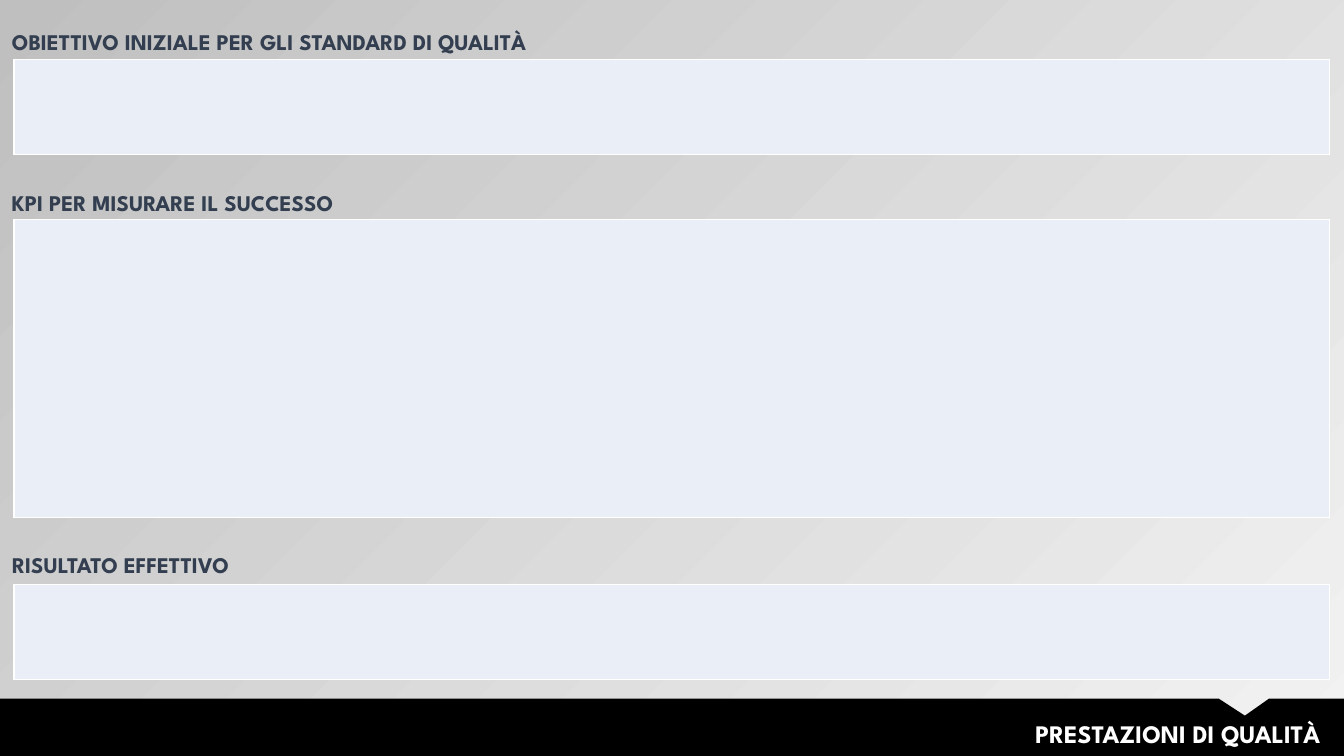
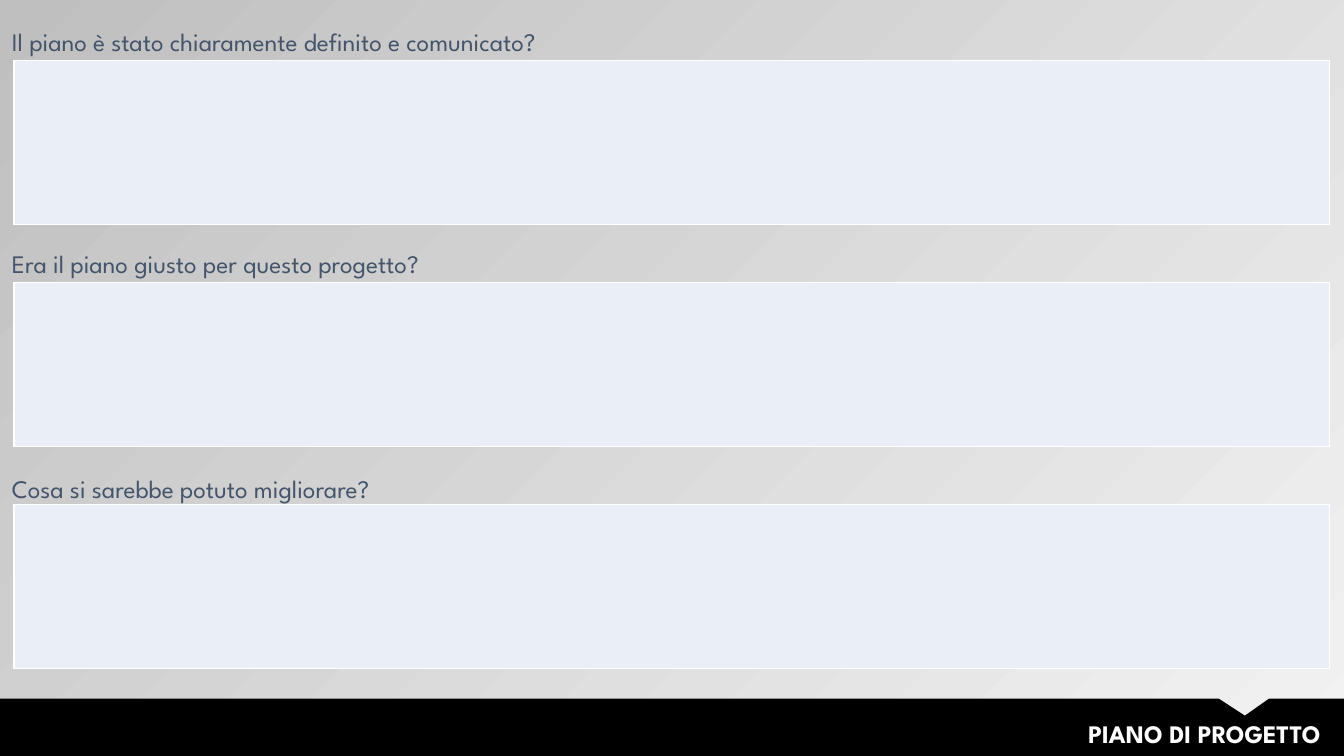
from lxml import etree
from pptx import Presentation
from pptx.dml.color import RGBColor
from pptx.enum import text
from pptx.oxml import ns
from pptx.util import Pt

SLIDE_W, SLIDE_H = 960, 540
FONT = "League Spartan"
BLACK, WHITE = "000000", "FFFFFF"
NAVY, SLATE, PANEL = "333F50", "44546A", "EAEFF7"
BACK_LIGHT, BACK_DARK = "F2F2F2", "BFBFBF"
BAND_TOP = 499
PANEL_LEFT, PANEL_W = 10, 939.6
LABEL_H = 28.8

HEADING = dict(size=16, color=NAVY, bold=True)
QUESTION = dict(size=18, color=SLATE)

# Each field: label, label width, label rise above the panel, panel top,
# panel height, label line spacing.
QUALITY_FIELDS = [
    ("OBIETTIVO INIZIALE PER GLI STANDARD DI QUALITÀ", 402, 28.8, 42.5, 67.7, Pt(21.5)),
    ("KPI PER MISURARE IL SUCCESSO", 382, 28.8, 157, 212.4, Pt(21.5)),
    ("RISULTATO EFFETTIVO", 243, 30.2, 417.6, 67.7, Pt(21.5)),
]
PLAN_QUESTIONS = [
    ("Il piano è stato chiaramente definito e comunicato?", 28.8, Pt(21.5)),
    ("Era il piano giusto per questo progetto?", 28.8, Pt(21.5)),
    ("Cosa si sarebbe potuto migliorare?", 31, 1.2),
]
PLAN_TOP, PLAN_STEP, PLAN_H = 43.2, 158.6, 117.4
PLAN_FIELDS = [
    (question, 549.4, rise, PLAN_TOP + i * PLAN_STEP, PLAN_H, spacing)
    for i, (question, rise, spacing) in enumerate(PLAN_QUESTIONS)
]


def rgb(value):
    return RGBColor.from_string(value)


def add_text(slide, words, box, *, size, color, bold=False, align=None,
             margins=(7.2, 3.6), line_spacing=None, space_before=None):
    frame = slide.shapes.add_textbox(*map(Pt, box)).text_frame
    frame.word_wrap = True
    frame.auto_size = text.MSO_AUTO_SIZE.SHAPE_TO_FIT_TEXT
    frame.margin_left = frame.margin_right = Pt(margins[0])
    frame.margin_top = frame.margin_bottom = Pt(margins[1])
    paragraph = frame.paragraphs[0]
    paragraph.alignment = align
    paragraph.line_spacing = line_spacing
    paragraph.space_before = space_before
    run = paragraph.add_run()
    run.text = words
    run.font.name, run.font.size, run.font.bold = FONT, Pt(size), bold
    run.font.color.rgb = rgb(color)


def set_background(master):
    fill = master.background.fill
    fill.gradient()
    fill.gradient_angle = 135
    for stop, color in zip(fill.gradient_stops, (BACK_LIGHT, BACK_DARK)):
        stop.color.rgb = rgb(color)
    light = master.element.xpath("./p:cSld/p:bg//a:srgbClr")[0]
    etree.SubElement(light, ns.qn("a:alpha"), val="40000")


def add_borders(cell, color, width):
    properties = cell._tc.get_or_add_tcPr()
    for position, side in enumerate(("lnL", "lnR", "lnT", "lnB")):
        line = etree.Element(ns.qn(f"a:{side}"), w=str(Pt(width)))
        solid = etree.SubElement(line, ns.qn("a:solidFill"))
        etree.SubElement(solid, ns.qn("a:srgbClr"), val=color)
        properties.insert(position, line)


def add_panel(slide, box):
    """Draw an empty one-cell table to be filled in."""
    table = slide.shapes.add_table(1, 1, *map(Pt, box)).table
    table.first_row = table.horz_banding = False
    cell = table.cell(0, 0)
    cell.fill.solid()
    cell.fill.fore_color.rgb = rgb(PANEL)
    add_borders(cell, WHITE, 1)


def add_field(slide, field, style):
    label, width, rise, top, height, spacing = field
    add_panel(slide, (PANEL_LEFT, top, PANEL_W, height))
    add_text(slide, label, (0, top - rise, width, LABEL_H),
             margins=(8.6, 4.3), line_spacing=spacing,
             space_before=Pt(0.2 * style["size"]), **style)


def add_footer(slide, title, top):
    """Draw the notched band and the slide title in it."""
    outline = slide.shapes.build_freeform(Pt(0), Pt(top))
    outline.add_line_segments([
        (Pt(x), Pt(y)) for x, y in (
            (870.5, top), (889.2, top + 12.2), (906.5, top),
            (SLIDE_W, top), (SLIDE_W, SLIDE_H), (0, SLIDE_H))
    ], close=True)
    band = outline.convert_to_shape()
    band.shadow.inherit = False
    band.fill.solid()
    band.fill.fore_color.rgb = rgb(BLACK)
    band.line.fill.background()
    add_text(slide, title, (298, top + 10.8, 652.4, 28.8), size=18,
             color=WHITE, bold=True, align=text.PP_ALIGN.RIGHT)


def add_form_slide(prs, title, fields, style):
    slide = prs.slides.add_slide(prs.slide_layouts[6])
    add_footer(slide, title, BAND_TOP)
    for field in fields:
        add_field(slide, field, style)


def main():
    prs = Presentation()
    prs.slide_width, prs.slide_height = Pt(SLIDE_W), Pt(SLIDE_H)
    set_background(prs.slide_master)
    add_form_slide(prs, "PRESTAZIONI DI QUALITÀ", QUALITY_FIELDS, HEADING)
    add_form_slide(prs, "PIANO DI PROGETTO", PLAN_FIELDS, QUESTION)
    prs.save("out.pptx")


if __name__ == "__main__":
    main()
